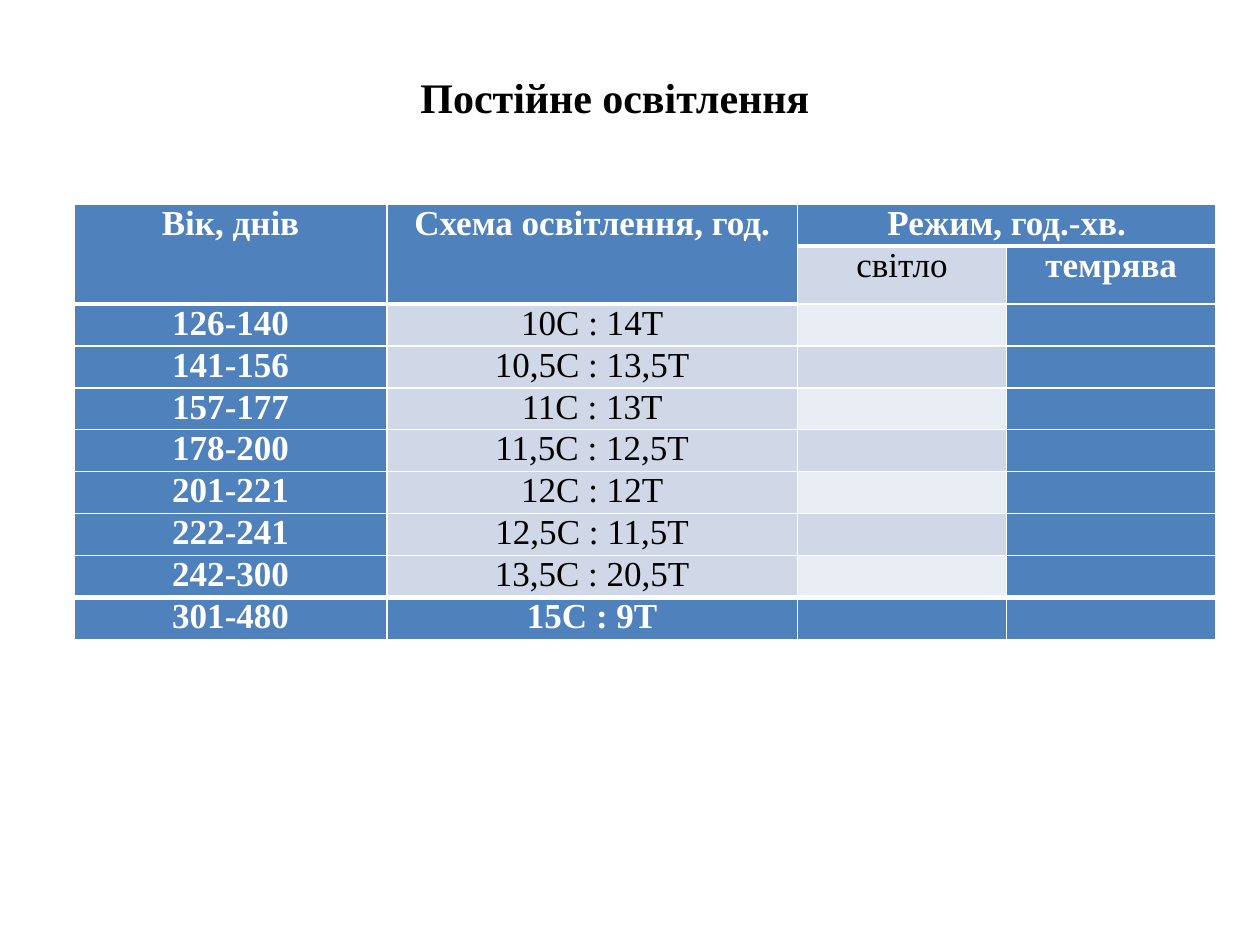
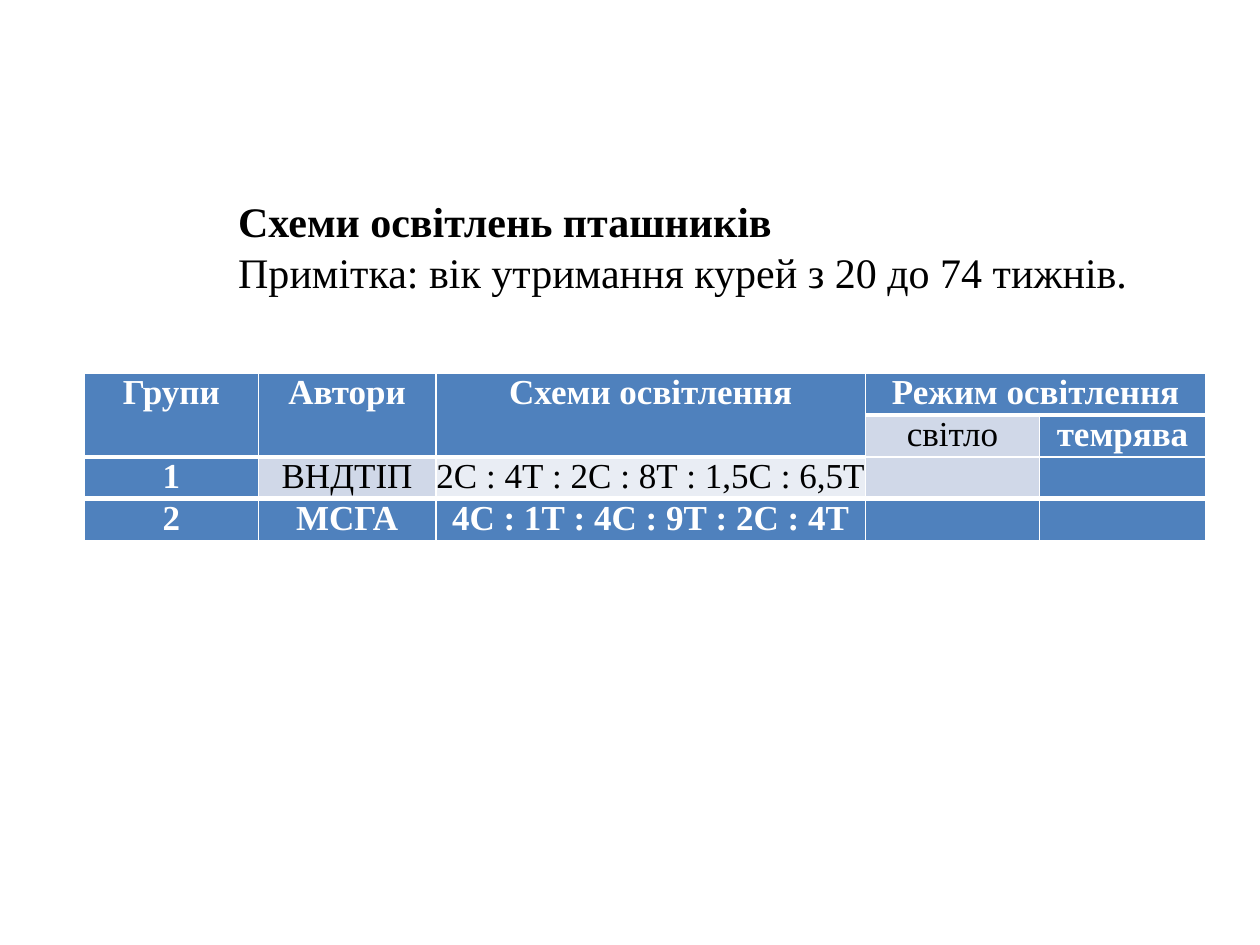
from dataclasses import dataclass
from lxml.etree import SubElement as Sub
from pptx import Presentation
from pptx.dml.color import RGBColor as Rgb
from pptx.enum.text import MSO_ANCHOR as Anchor, MSO_AUTO_SIZE as Auto, PP_ALIGN as Align
from pptx.oxml.ns import qn
from pptx.util import Inches, Pt


@dataclass(frozen=True)
class Theme:
    font: str = "Times New Roman"
    head: int = 24
    body: int = 20
    blue: str = "4F81BD"
    mid: str = "D0D8E8"
    pale: str = "E9EDF4"
    white: str = "FFFFFF"
    black: str = "000000"
    thin: int = 1
    thick: int = 3


THEME = Theme()
WIDE, HIGH = Inches(10), Inches(7.5)
ROW = 4.44


def across(share):
    return int(WIDE * share / 100)


def down(share):
    return int(HIGH * share / 100)


def style(par, size, color, bold):
    for run in par.runs:
        font = run.font
        font.name, font.size, font.bold = THEME.font, Pt(size), bold
        font.color.rgb = Rgb.from_string(color)


def add_title(slide, text, left, top, width, height, align, indent=0):
    title = slide.shapes.title
    title.left, title.top = across(left), down(top)
    title.width, title.height = across(width), down(height)
    frame = title.text_frame
    frame.text = text
    frame.word_wrap = False
    frame.auto_size = Auto.NONE
    frame.vertical_anchor = Anchor.MIDDLE
    for spot, par in enumerate(frame.paragraphs):
        par.alignment = align
        par._p.get_or_add_pPr().set("indent", str(across(indent)))
        style(par, THEME.head, THEME.black, spot == 0)


def add_edges(cell, top, base):
    props = cell._tc.get_or_add_tcPr()
    sides = {"L": THEME.thin, "R": THEME.thin, "T": top, "B": base}
    for spot, (side, width) in enumerate(sides.items()):
        line = Sub(props, qn(f"a:ln{side}"), w=str(Pt(width)))
        fill = Sub(line, qn("a:solidFill"))
        Sub(fill, qn("a:srgbClr"), val=THEME.white)
        props.insert(spot, line)


def fill_cell(cell, text, color):
    cell.margin_left = cell.margin_right = 0
    cell.margin_top = cell.margin_bottom = 0
    cell.fill.solid()
    cell.fill.fore_color.rgb = Rgb.from_string(color)
    if text:
        cell.text_frame.text = text
        par = cell.text_frame.paragraphs[0]
        par.alignment = Align.CENTER
        strong = color == THEME.blue
        style(par, THEME.body, THEME.white if strong else THEME.black, strong)


def add_grid(slide, left, top, cols, rows, data, pale):
    count, last = len(cols), len(rows) - 1
    frame = slide.shapes.add_table(
        len(rows), count, across(left), down(top), across(sum(cols)), down(sum(rows)))
    table = frame.table
    for col, share in zip(table.columns, cols):
        col.width = across(share)
    for row, share in zip(table.rows, rows):
        row.height = down(share)

    split = count - 2
    for col in range(split):
        table.cell(0, col).merge(table.cell(1, col))
    table.cell(0, split).merge(table.cell(0, count - 1))

    def edge(row, col):
        under = 2 if col < split else 1
        return THEME.thick if row in (under, last) else THEME.thin

    def shade(row, col):
        if row in (0, last) or col in (0, count - 1) or (row == 1 and col < split):
            return THEME.blue
        return THEME.pale if (row, col) in pale else THEME.mid

    for row in range(len(rows)):
        for col in range(count):
            cell = table.cell(row, col)
            text = data[row][col] if col < len(data[row]) else ""
            fill_cell(cell, text, shade(row, col))
            base = 2 if row == 0 and col < split else row + 1
            add_edges(cell, edge(row, col), edge(base, col))


def add_constant(slide):
    add_title(slide, "Постійне освітлення", 32.2, 6.93, 33.2, 6.67, Align.CENTER)
    data = [
        ["Вік, днів", "Схема освітлення, год.", "Режим, год.-хв."],
        ["", "", "світло", "темрява"],
        ["126-140", "10С : 14Т"],
        ["141-156", "10,5С : 13,5Т"],
        ["157-177", "11С : 13Т"],
        ["178-200", "11,5С : 12,5Т"],
        ["201-221", "12С : 12Т"],
        ["222-241", "12,5С : 11,5Т"],
        ["242-300", "13,5С : 20,5Т"],
        ["301-480", "15С : 9Т"],
    ]
    rows = [ROW, 6.13] + [ROW] * 8
    pale = {(row, 2) for row in range(2, 9, 2)}
    add_grid(slide, 5.9, 21.6, [24.8, 32.6, 16.6, 16.6], rows, data, pale)


def add_schemes(slide):
    text = "Схеми освітлень пташників\nПримітка: вік утримання курей з 20 до 74 тижнів."
    add_title(slide, text, 13, 20, 78.3, 12.13, Align.LEFT, 4.9)
    data = [
        ["Групи", "Автори", "Схеми освітлення", "Режим освітлення"],
        ["", "", "", "світло", "темрява"],
        ["1", "ВНДТІП", "2С : 4Т : 2С : 8Т : 1,5С : 6,5Т"],
        ["2", "МСГА", "4С : 1Т : 4С : 9Т : 2С : 4Т"],
    ]
    cols = [13.8, 14.1, 34.1, 13.8, 13.2]
    add_grid(slide, 6.7, 39.47, cols, [ROW] * 4, data, {(2, 2)})


def main():
    deck = Presentation()
    deck.slide_width, deck.slide_height = WIDE, HIGH
    for build in (add_constant, add_schemes):
        build(deck.slides.add_slide(deck.slide_layouts[5]))
    deck.save("out.pptx")


if __name__ == "__main__":
    main()
